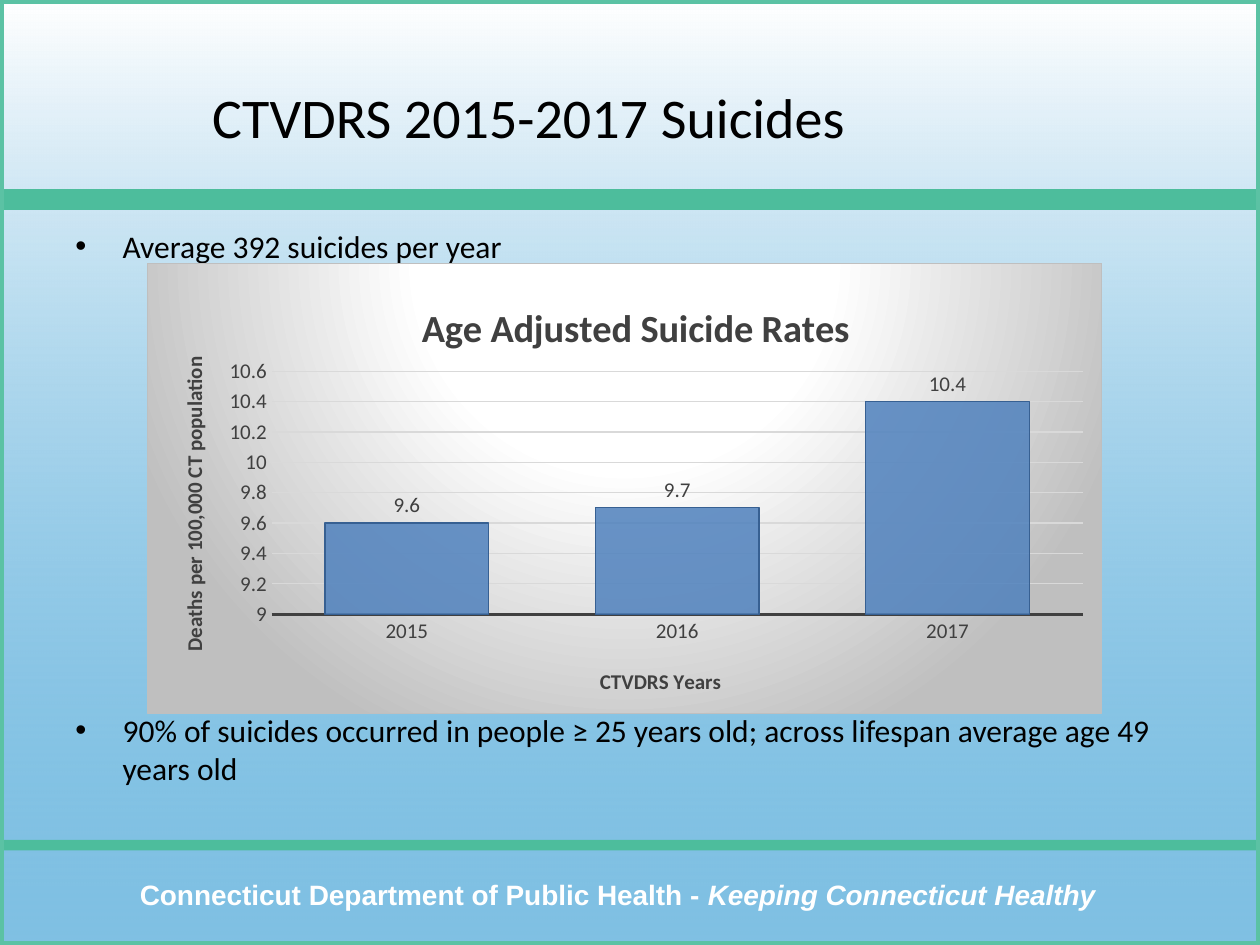
from lxml import etree
from pptx import Presentation
from pptx import util as u
from pptx.chart.data import CategoryChartData
from pptx.dml.color import RGBColor
from pptx.enum import chart as charts, shapes, text
from pptx.oxml import parse_xml
from pptx.oxml.ns import nsdecls, qn

Pt = u.Pt
WIDTH, HEIGHT = 720, 540


def color(value):
    return RGBColor.from_string(value)


def set_alpha(fill_element, percent):
    for srgb in fill_element.iter(qn("a:srgbClr")):
        etree.SubElement(srgb, qn("a:alpha")).set("val", str(percent * 1000))


def place_in_chart(element, x, y, w=None, h=None):
    """Give a chart part a manual layout, in fractions of the chart's size."""
    layout = element.find(qn("c:layout"))
    if layout is None:
        layout = etree.Element(qn("c:layout"))
        element.insert(0, layout)
    manual = etree.SubElement(layout, qn("c:manualLayout"))
    settings = [("xMode", "edge"), ("yMode", "edge"), ("x", x), ("y", y)]
    if w is not None:
        settings = [("layoutTarget", "inner")] + settings + [("w", w), ("h", h)]
    for tag, value in settings:
        etree.SubElement(manual, qn(f"c:{tag}")).set("val", str(value))


class HealthSlide:
    FONT, FOOTER_FONT = "Calibri", "Arial"
    INK, CHART_INK = "000000", "404040"
    GREEN, FRAME = "4DBD9C", "5BC2A4"
    SKY, WHITE = "0082C8", "FFFFFF"

    def __init__(self, presentation):
        self.slide = presentation.slides.add_slide(presentation.slide_layouts[5])

    def style(self, font, size, ink, bold=False, name=FONT):
        font.name, font.size, font.bold = name, Pt(size), bold
        font.color.rgb = color(ink)

    def rectangle(self, top, height):
        """Add a full-width rectangle without fill or line."""
        rect = self.slide.shapes.add_shape(
            shapes.MSO_SHAPE.RECTANGLE, 0, Pt(top), Pt(WIDTH), Pt(height))
        rect.shadow.inherit = False
        rect.fill.background()
        rect.line.fill.background()
        return rect

    def sky(self):
        fill = self.rectangle(0, HEIGHT).fill
        fill.gradient()
        fill.gradient_angle = 90
        bottom, top = fill.gradient_stops
        bottom.color.rgb, top.color.rgb = color(self.SKY), color(self.WHITE)
        bottom.position, top.position = 0, 1
        set_alpha(bottom._gs, 50)

    def band(self, top, height):
        fill = self.rectangle(top, height).fill
        fill.solid()
        fill.fore_color.rgb = color(self.GREEN)

    def frame(self):
        line = self.rectangle(0, HEIGHT).line
        line.color.rgb, line.width = color(self.FRAME), Pt(4.5)

    def title(self, words, left, top, width, height):
        title = self.slide.shapes.title
        title.left, title.top, title.width, title.height = map(
            Pt, (left, top, width, height))
        # The placeholder comes first on a new slide; bring it above the background.
        self.slide.shapes._spTree.append(title._element)
        title.text_frame.text = words
        title.text_frame.vertical_anchor = text.MSO_ANCHOR.MIDDLE
        heading = title.text_frame.paragraphs[0]
        heading.alignment = text.PP_ALIGN.LEFT
        self.style(heading.font, 32, self.INK)

    def text_box(self, left, top, width, height):
        frame = self.slide.shapes.add_textbox(
            *map(Pt, (left, top, width, height))).text_frame
        frame.word_wrap = True
        return frame

    def footer(self, department, motto, *box):
        line = self.text_box(*box).paragraphs[0]
        line.alignment = text.PP_ALIGN.CENTER
        line.add_run().text = department
        slogan = line.add_run()
        slogan.text = motto
        slogan.font.italic = True
        self.style(line.font, 16, self.WHITE, True, self.FOOTER_FONT)

    def bullets(self, points, gap, *box):
        frame = self.text_box(*box)
        for index, words in enumerate(points):
            point = frame.paragraphs[0] if index == 0 else frame.add_paragraph()
            point.text = words
            props = point._p.get_or_add_pPr()
            props.set("marL", str(Pt(27)))
            props.set("indent", str(-Pt(27)))
            etree.SubElement(props, qn("a:buFont")).set("typeface", "Arial")
            etree.SubElement(props, qn("a:buChar")).set("char", "•")
            if index:
                point.space_before = Pt(gap)
            self.style(point.font, 18, self.INK)

    def chart_heading(self, heading, words, size, x, y):
        heading.text_frame.text = words
        self.style(heading.text_frame.paragraphs[0].font, size, self.CHART_INK, True)
        place_in_chart(heading._element, x, y)

    def rate_chart(self, name, rates, *box):
        data = CategoryChartData()
        data.categories = list(rates)
        data.add_series(name, list(rates.values()))
        chart = self.slide.shapes.add_chart(
            charts.XL_CHART_TYPE.COLUMN_CLUSTERED, *map(Pt, box), data).chart
        chart.has_legend = False
        self.style(chart.font, 10, self.INK)
        self.chart_heading(chart.chart_title, name, 22, 0.28, 0.07)
        self.chart_background(chart)
        place_in_chart(chart._chartSpace.chart.plotArea, 0.13, 0.24, 0.85, 0.54)

        years, deaths = chart.category_axis, chart.value_axis
        for axis in (years, deaths):
            axis.major_tick_mark = axis.minor_tick_mark = charts.XL_TICK_MARK.NONE
            self.style(axis.tick_labels.font, 12, self.CHART_INK)
        self.chart_heading(years.axis_title, "CTVDRS Years", 12, 0.47, 0.89)
        self.chart_heading(
            deaths.axis_title, "Deaths per 100,000 CT population", 12, 0.03, 0.2)
        years.format.line.color.rgb = color(self.CHART_INK)
        years.format.line.width = Pt(1.5)
        deaths.format.line.fill.background()
        deaths.minimum_scale, deaths.maximum_scale, deaths.major_unit = 9, 10.6, 0.2
        grid = deaths.major_gridlines.format.line
        grid.color.rgb, grid.width = color("D9D9D9"), Pt(0.75)
        self.columns(chart.plots[0])

    def columns(self, plot):
        plot.gap_width = 65
        plot.vary_by_categories = False
        series = plot.series[0]
        series.format.fill.solid()
        series.format.fill.fore_color.rgb = color("4F81BD")
        set_alpha(series._element.spPr, 85)
        series.format.line.color.rgb = color("376092")
        series.format.line.width = Pt(0.75)
        plot.has_data_labels = True
        labels = plot.data_labels
        labels.show_value = True
        labels.position = charts.XL_LABEL_POSITION.OUTSIDE_END
        self.style(labels.font, 12, self.CHART_INK)

    def chart_background(self, chart):
        stops = "".join(
            f'<a:gs pos="{position * 1000}"><a:srgbClr val="{shade}"/></a:gs>'
            for position, shade in ((0, "FFFFFF"), (39, "FFFFFF"), (100, "BFBFBF")))
        chart._chartSpace.chart.addnext(parse_xml(
            f'<c:spPr {nsdecls("c", "a")}><a:gradFill><a:gsLst>{stops}</a:gsLst>'
            '<a:path path="circle">'
            '<a:fillToRect l="50000" t="-80000" r="50000" b="180000"/></a:path>'
            f'</a:gradFill><a:ln w="{Pt(0.75)}"><a:solidFill>'
            '<a:srgbClr val="BFBFBF"/></a:solidFill></a:ln></c:spPr>'))


def main():
    presentation = Presentation()
    presentation.slide_width, presentation.slide_height = Pt(WIDTH), Pt(HEIGHT)
    page = HealthSlide(presentation)
    page.sky()
    page.band(480, 6)
    page.footer("Connecticut Department of Public Health - ",
                "Keeping Connecticut Healthy", 35, 498, 636, 27)
    page.band(108, 12)
    page.frame()
    page.title("CTVDRS 2015-2017 Suicides", 114, 21.6, 570, 90)
    page.bullets(
        ["Average 392 suicides per year",
         "90% of suicides occurred in people ≥ 25 years old; "
         "across lifespan average age 49 years old"],
        255, 36, 126, 648, 336)
    page.rate_chart("Age Adjusted Suicide Rates",
                    {"2015": 9.6, "2016": 9.7, "2017": 10.4}, 84, 150, 546, 258)
    presentation.save("out.pptx")


if __name__ == "__main__":
    main()
